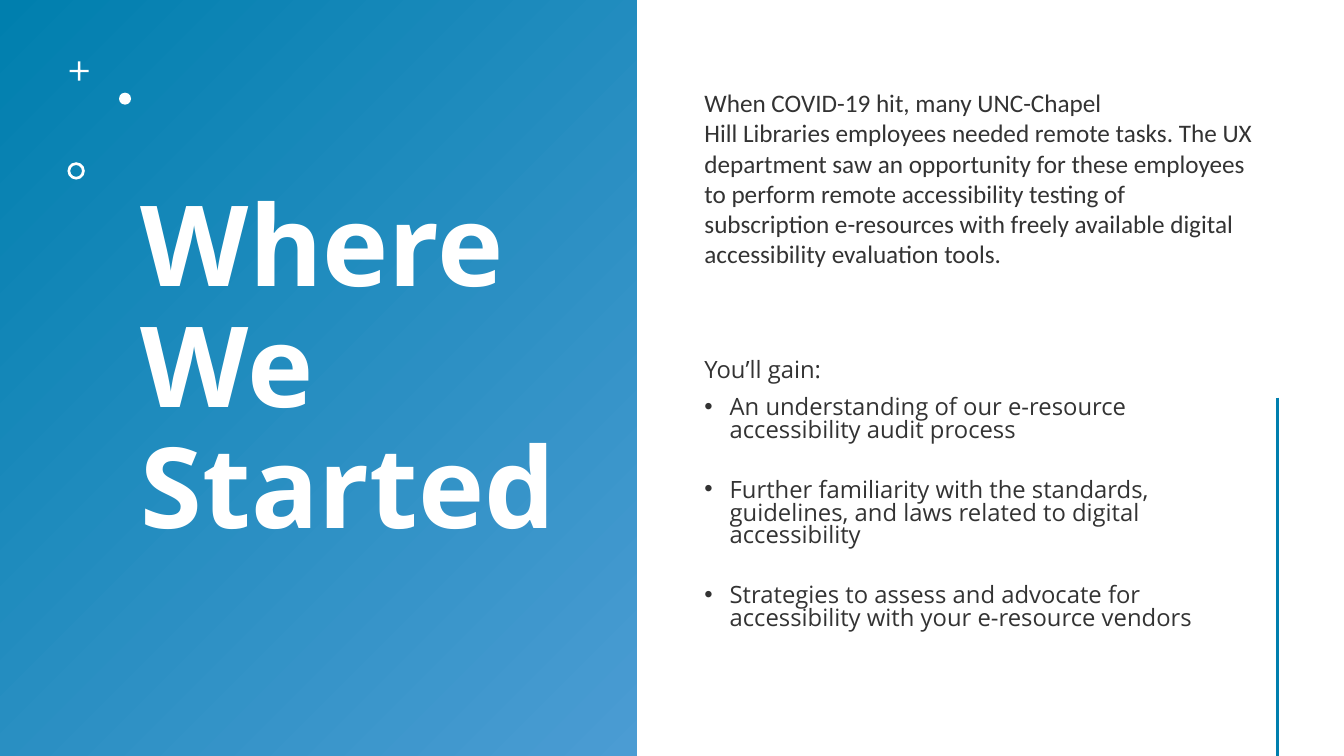
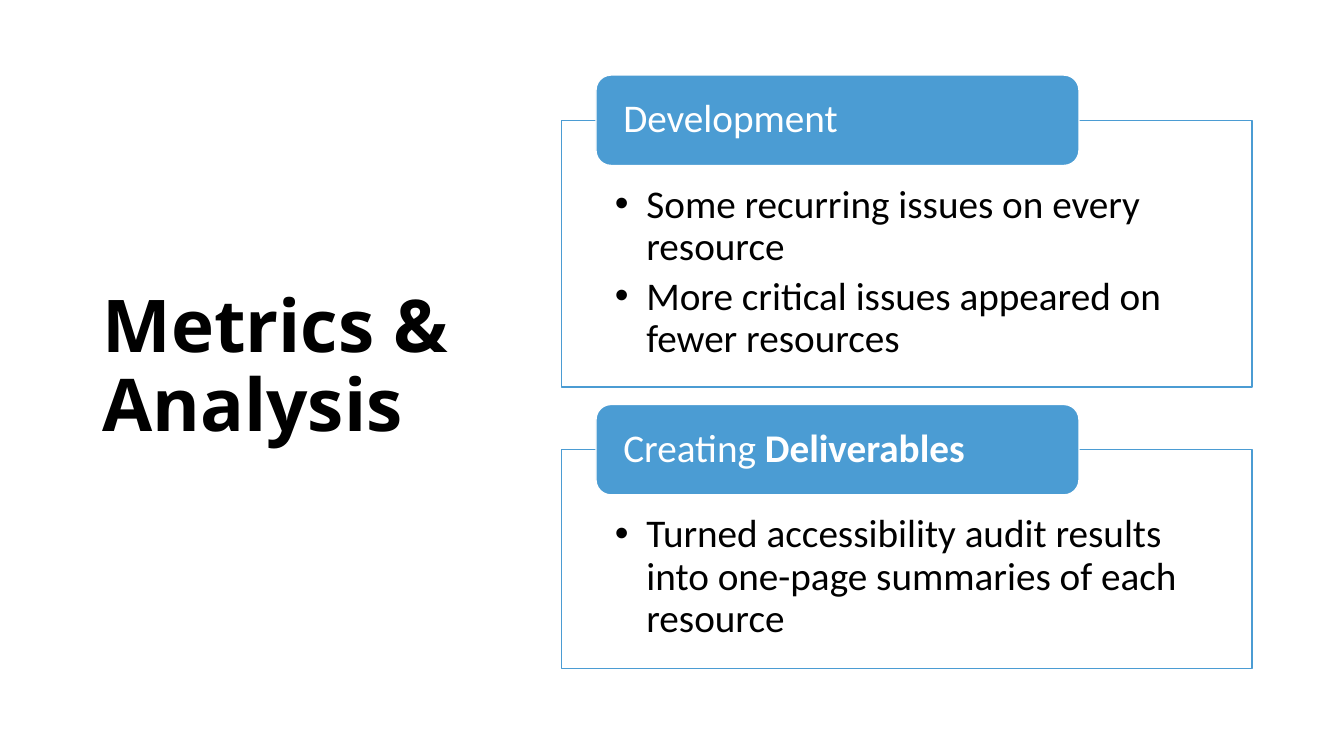
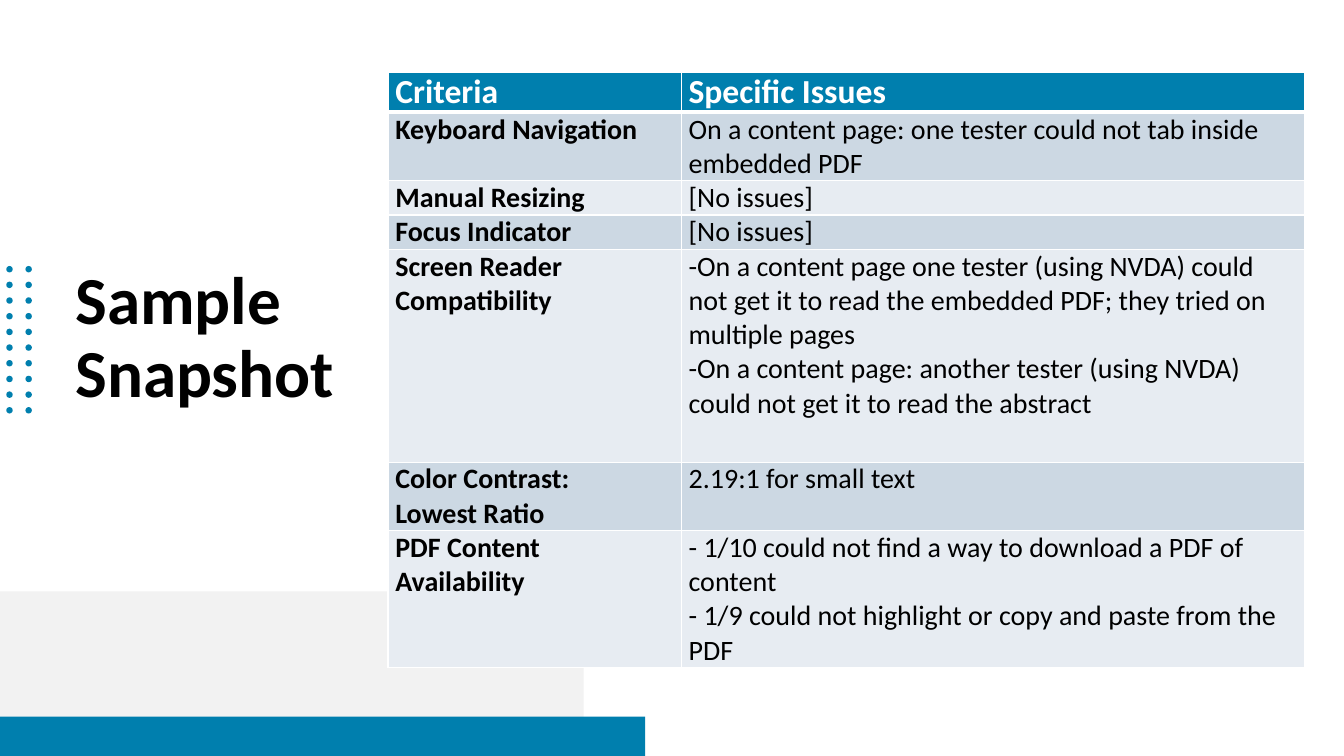
from dataclasses import dataclass

from lxml import etree
from pptx import Presentation
from pptx.dml.color import RGBColor
from pptx.enum import shapes, text
from pptx.oxml import ns
from pptx.util import Pt


@dataclass(frozen=True)
class Theme:
    teal: RGBColor = RGBColor.from_string("007FAE")
    blue: RGBColor = RGBColor.from_string("4B9CD3")
    white: RGBColor = RGBColor.from_string("FFFFFF")
    black: RGBColor = RGBColor.from_string("000000")
    ink: RGBColor = RGBColor.from_string("333333")
    pale: RGBColor = RGBColor.from_string("F2F2F2")
    band_dark: RGBColor = RGBColor.from_string("CCD8E3")
    band_light: RGBColor = RGBColor.from_string("E7ECF2")
    heading_font: str = "Open Sans"
    body_font: str = "Calibri"
    hero: int = 80
    title: int = 52
    table_title: int = 48
    card: int = 28
    table_head: int = 24
    table_body: int = 20
    intro: int = 18
    gains: int = 17


THEME = Theme()
KIND = shapes.MSO_SHAPE
MIDDLE = text.MSO_ANCHOR.MIDDLE


def add_block(slide, kind, box, fill, line=None):
    """Add a flat shape, or a text box when kind is None."""
    left, top, width, height = (Pt(v) for v in box)
    if kind is None:
        return slide.shapes.add_textbox(left, top, width, height)
    block = slide.shapes.add_shape(kind, left, top, width, height)
    block.shadow.inherit = False
    block.fill.solid()
    block.fill.fore_color.rgb = fill
    if line is None:
        block.line.fill.background()
    else:
        block.line.color.rgb = line
        block.line.width = Pt(1)
    return block


def write(frame, lines, size, color, font=THEME.body_font, bold=False,
          spacing=None, before=0, indent=0, anchor=text.MSO_ANCHOR.TOP):
    """Fill a frame with paragraphs; **marks** enclose bold words."""
    frame.word_wrap = True
    frame.vertical_anchor = anchor
    for i, line in enumerate(lines):
        paragraph = frame.paragraphs[0] if i == 0 else frame.add_paragraph()
        paragraph.alignment = text.PP_ALIGN.LEFT
        if indent:
            props = paragraph._p.get_or_add_pPr()
            props.set("marL", str(Pt(indent)))
            props.set("indent", str(-Pt(indent)))
            etree.SubElement(props, ns.qn("a:buFont"), typeface="Arial")
            etree.SubElement(props, ns.qn("a:buChar"), char="•")
        if spacing:
            paragraph.line_spacing = spacing
        if i and before:
            paragraph.space_before = Pt(before)
        for j, words in enumerate(line.split("**")):
            if words:
                run = paragraph.add_run()
                run.text = words
                run.font.name = font
                run.font.size = Pt(size)
                run.font.bold = bold or j % 2 == 1
                run.font.color.rgb = color


deck = Presentation()
deck.slide_width, deck.slide_height = Pt(960), Pt(540)
started, metrics, snapshot = (
    deck.slides.add_slide(deck.slide_layouts[6]) for _ in range(3))

# Slide 1: gradient panel
panel = add_block(started, KIND.RECTANGLE, (0, 0, 455, 540), THEME.teal)
panel.fill.gradient()
panel.fill.gradient_angle = 315
for stop, color in zip(panel.fill.gradient_stops, (THEME.teal, THEME.blue)):
    stop.color.rgb = color

# Titles of all three slides
titles = (
    (started, "Where We Started", (93.6, 30.2, 315.4, 470.2),
     THEME.hero, THEME.white, THEME.heading_font),
    (metrics, "Metrics & Analysis", (66.2, 43.9, 265.7, 438.5),
     THEME.title, THEME.black, THEME.heading_font),
    (snapshot, "Sample Snapshot", (46.8, 115.9, 225, 252.7),
     THEME.table_title, THEME.black, THEME.body_font),
)
for slide, title, box, size, color, font in titles:
    heading = add_block(slide, None, box, None)
    write(heading.text_frame, [title], size, color, font, bold=True,
          spacing=0.9, anchor=MIDDLE)

# Slide 1: ornaments
plus = add_block(started, KIND.CROSS, (49.7, 43.9, 13.7, 13.7), THEME.white)
plus.adjustments[0] = 0.44
add_block(started, KIND.OVAL, (85, 66.2, 8.6, 8.6), THEME.white)
ring = add_block(started, KIND.DONUT, (48.2, 115.9, 12.4, 12.4), THEME.white)
ring.adjustments[0] = 0.16

# Slide 1: introduction, with the unbroken phrase kept on one line
unbroken = "Hill Libraries employees needed".replace(" ", chr(160))
intro = add_block(started, None, (496.1, 59, 408.2, 138.2), None)
write(intro.text_frame, [
    f"When COVID-19 hit, many UNC-Chapel {unbroken} remote tasks. The UX "
    "department saw an opportunity for these employees to perform remote "
    "accessibility testing of subscription e-resources with freely available "
    "digital accessibility evaluation tools."], THEME.intro, THEME.ink)

# Slide 1: gains
gains_lead = add_block(started, None, (496.1, 254, 375.8, 26), None)
write(gains_lead.text_frame, ["You’ll gain:"], THEME.gains, THEME.ink,
      THEME.heading_font, spacing=0.8)
gains = add_block(started, None, (496.1, 280.3, 375.8, 180), None)
write(gains.text_frame, [
    "An understanding of our e-resource accessibility audit process",
    "Further familiarity with the standards, guidelines, and laws related to "
    "digital accessibility",
    "Strategies to assess and advocate for accessibility with your e-resource "
    "vendors"], THEME.gains, THEME.ink, THEME.heading_font,
      spacing=0.8, before=26.3, indent=18)

# Slide 1: vertical rule
rule = started.shapes.add_connector(
    shapes.MSO_CONNECTOR.STRAIGHT, Pt(912.3), Pt(284), Pt(912.3), Pt(540))
rule.line.color.rgb = THEME.teal
rule.line.width = Pt(2)
etree.SubElement(rule._element.spPr, ns.qn("a:effectLst"))

# Slide 2: cards with a label across the top edge
cards = (
    ("Development", 85.9, 190.7,
     ["Some recurring issues on every resource",
      "More critical issues appeared on fewer resources"]),
    ("Creating **Deliverables**", 321.2, 156.3,
     ["Turned accessibility audit results into one-page summaries of each "
      "resource"]),
)
for label, top, height, points in cards:
    card = add_block(metrics, KIND.RECTANGLE, (401, top, 493.3, height),
                     THEME.white, THEME.blue)
    frame = card.text_frame
    frame.margin_left = frame.margin_right = Pt(38.2)
    frame.margin_top, frame.margin_bottom = Pt(46), Pt(15.8)
    write(frame, points, THEME.card, THEME.black,
          spacing=0.9, before=5, indent=22.5)
    tab = add_block(metrics, KIND.ROUNDED_RECTANGLE,
                    (425.7, top - 32.3, 345, 64.6), THEME.blue, THEME.white)
    tab.text_frame.margin_left = tab.text_frame.margin_right = Pt(16.4)
    write(tab.text_frame, [label], THEME.card, THEME.white,
          spacing=0.9, anchor=MIDDLE)

# Slide 3: dot grid and bottom bands
for row in range(10):
    for column in range(2):
        add_block(snapshot, KIND.OVAL,
                  (4.5 + 13.7 * column, 190 + 11.2 * row, 4.6, 4.6),
                  THEME.teal)
add_block(snapshot, KIND.RECTANGLE, (0, 422.4, 416.9, 117.6), THEME.pale)
add_block(snapshot, KIND.RECTANGLE, (0, 511.9, 460.8, 28.1), THEME.teal)

# Slide 3: table of criteria, each row with its height
criteria = (
    (28.8, ["Criteria"], ["Specific Issues"]),
    (48.9, ["Keyboard Navigation"],
     ["On a content page: one tester could not tab inside embedded PDF"]),
    (24.5, ["Manual Resizing"], ["[No issues]"]),
    (24.5, ["Focus Indicator"], ["[No issues]"]),
    (152, ["Screen Reader Compatibility"],
     ["-On a content page one tester (using NVDA) could not get it to read "
      "the embedded PDF; they tried on multiple pages",
      "-On a content page: another tester (using NVDA) could not get it to "
      "read the abstract"]),
    (48.9, ["Color Contrast:", "Lowest Ratio"], ["2.19:1 for small text"]),
    (98, ["PDF Content Availability"],
     ["- 1/10 could not find a way to download a PDF of content",
      "- 1/9 could not highlight or copy and paste from the PDF"]),
)
table = snapshot.shapes.add_table(
    len(criteria), 2, Pt(277.2), Pt(51.4), Pt(654.5), Pt(425.6)).table
for column, width in zip(table.columns, (209.5, 445)):
    column.width = Pt(width)
for r, (height, *entries) in enumerate(criteria):
    table.rows[r].height = Pt(height)
    header = r == 0
    band = THEME.band_dark if r % 2 else THEME.band_light
    for c, entry in enumerate(entries):
        cell = table.cell(r, c)
        cell.margin_left = cell.margin_right = Pt(5.2)
        cell.margin_top = cell.margin_bottom = 0
        write(cell.text_frame, entry,
              THEME.table_head if header else THEME.table_body,
              THEME.white if header else THEME.black,
              bold=header or c == 0)
        props = cell._tc.get_or_add_tcPr()
        for side in "LRTB":
            heavy = (r, side) in ((0, "B"), (1, "T"))
            edge = etree.SubElement(props, ns.qn(f"a:ln{side}"),
                                    w=str(Pt(3 if heavy else 1)))
            paint = etree.SubElement(edge, ns.qn("a:solidFill"))
            etree.SubElement(paint, ns.qn("a:srgbClr"), val=str(THEME.white))
        cell.fill.solid()
        cell.fill.fore_color.rgb = THEME.teal if header else band

deck.save("out.pptx")
